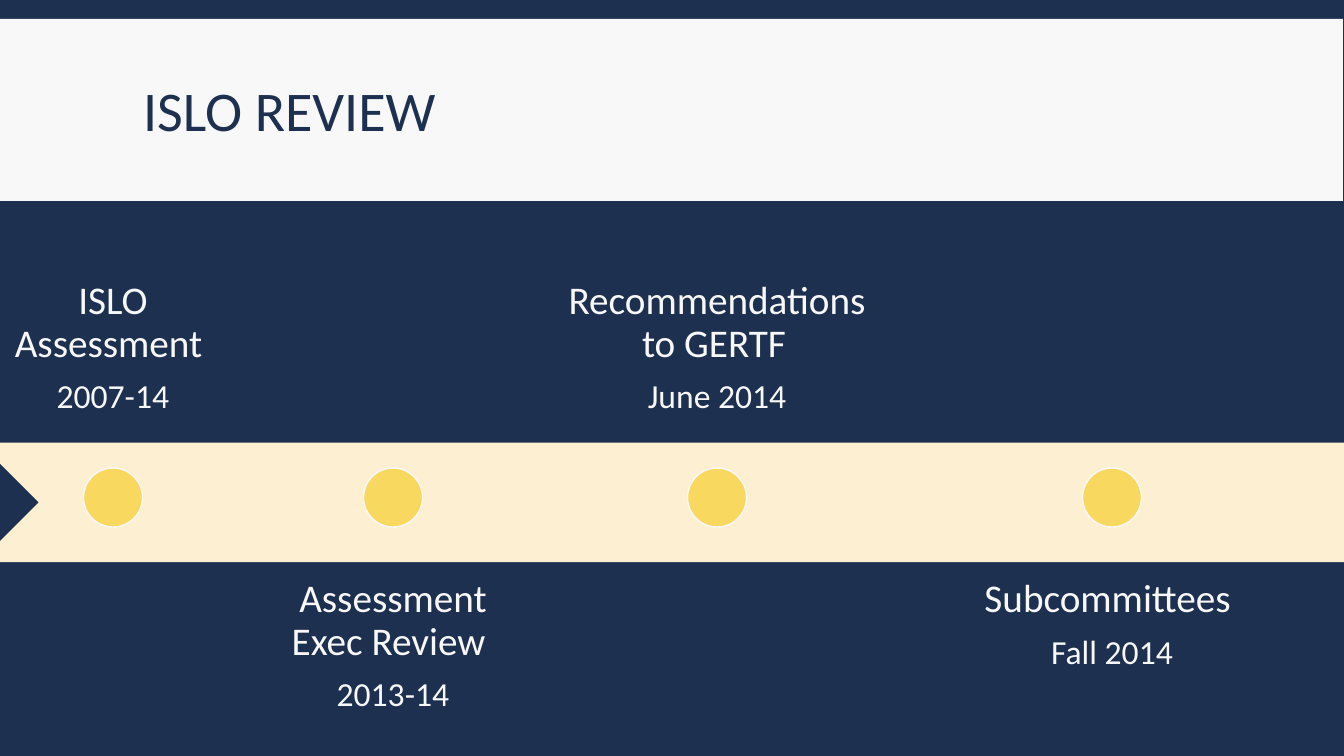
from pptx import Presentation
from pptx.dml.color import RGBColor
from pptx.enum.shapes import MSO_SHAPE
from pptx.enum.text import MSO_ANCHOR, MSO_AUTO_SIZE, PP_ALIGN
from pptx.util import Pt

RECTANGLE = MSO_SHAPE.RECTANGLE
ELLIPSE = MSO_SHAPE.OVAL
ARROW = MSO_SHAPE.NOTCHED_RIGHT_ARROW
TOP, MIDDLE, BOTTOM = MSO_ANCHOR.TOP, MSO_ANCHOR.MIDDLE, MSO_ANCHOR.BOTTOM
LEFT, CENTER = PP_ALIGN.LEFT, PP_ALIGN.CENTER
NO_AUTOFIT = MSO_AUTO_SIZE.NONE

PX = 914400 / 100.8
FONT = "Calibri"
NAVY, PALE, CREAM, GOLD = "1D304F", "F8F8F8", "FDF0D2", "F9D860"
DOT = 59
INSET = 22

MILESTONES = [
    (113, 267, True, [("ISLO Assessment ", 28)], "2007-14"),
    (393, 267, False, [("Assessment Exec Review ", 28)], "2013-14"),
    (717, 355, True, [("Recommendations to GERTF", 28), (" ", 19)], "June 2014"),
    (1112, 408, False, [("Subcommittees ", 28)], "Fall 2014"),
]


def px(length):
    return round(length * PX)


def color(hex_code):
    return RGBColor.from_string(hex_code)


def add_span(para, text, size, hex_code):
    span = para.add_run()
    span.text = text
    span.font.name = FONT
    span.font.size = Pt(size)
    span.font.color.rgb = color(hex_code)


def add_filled(page, kind, box, fill, line=None):
    shape = page.shapes.add_shape(kind, *map(px, box))
    shape.shadow.inherit = False
    shape.fill.solid()
    shape.fill.fore_color.rgb = color(fill)
    if line:
        shape.line.color.rgb = color(line)
        shape.line.width = Pt(1)
    else:
        shape.line.fill.background()
    return shape


def add_header(page, box, text):
    left, top, width, height = box
    band = add_filled(page, RECTANGLE, box, PALE)
    title = page.shapes.title
    title.left, title.top = px(left + 133), px(top + 12)
    title.width, title.height = px(width - 264), px(height - 16)
    title._element.addprevious(band._element)
    frame = title.text_frame
    frame.auto_size = NO_AUTOFIT
    frame.word_wrap = True
    frame.vertical_anchor = MIDDLE
    para = frame.paragraphs[0]
    para.alignment = LEFT
    para.line_spacing = 0.85
    add_span(para, text, 40, NAVY)


def add_label(page, box, anchor, heading, date):
    frame = page.shapes.add_textbox(*map(px, box)).text_frame
    frame.word_wrap = True
    frame.vertical_anchor = anchor
    frame.margin_left = frame.margin_right = px(INSET)
    frame.margin_top = frame.margin_bottom = px(INSET)
    for spans in (heading, [(date, 24)]):
        para = frame.paragraphs[0] if spans is heading else frame.add_paragraph()
        para.alignment = CENTER
        para.line_spacing = 0.9
        para.space_after = Pt(10)
        for text, size in spans:
            add_span(para, text, size, PALE)


def add_timeline(page, box):
    left, top, width, height = box
    add_filled(page, ARROW, box, CREAM)
    for center, label_width, above, heading, date in MILESTONES:
        label_top = top - 184 if above else top + 174
        label_box = (center - label_width / 2, label_top, label_width, height)
        add_label(page, label_box, BOTTOM if above else TOP, heading, date)
        add_filled(page, ELLIPSE, (center - DOT / 2, top + 85, DOT, DOT), GOLD, PALE)


def main():
    deck = Presentation()
    deck.slide_width, deck.slide_height = px(1344), px(756)
    page = deck.slides.add_slide(deck.slide_layouts[5])
    page.background.fill.solid()
    page.background.fill.fore_color.rgb = color(NAVY)
    add_header(page, (0, 19, 1343, 182), "ISLO REVIEW")
    add_timeline(page, (-21, 383, 1486, 239))
    deck.save("out.pptx")


if __name__ == "__main__":
    main()
